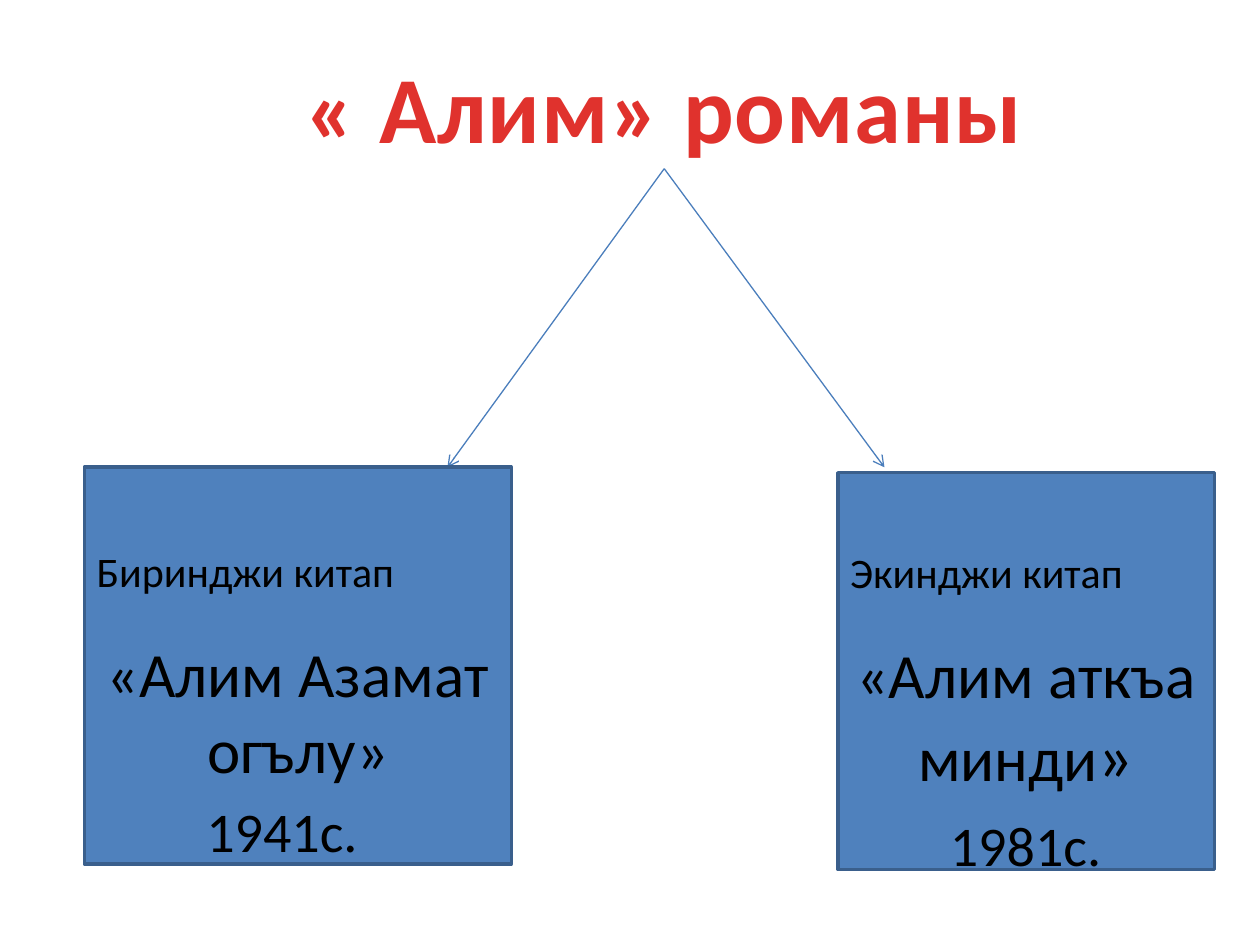
from lxml.etree import SubElement as Sub
from pptx import Presentation
from pptx.dml.color import RGBColor
from pptx.enum.shapes import MSO_CONNECTOR as Link, MSO_SHAPE as Shape
from pptx.enum.text import MSO_ANCHOR as Anchor, PP_ALIGN as Align
from pptx.oxml.ns import qn
from pptx.util import Cm, Pt


def paint(color, code):
    """Fill or font colour from a hex string."""
    color.rgb = RGBColor.from_string(code)


def style(para, size, code="000000", align=Align.LEFT):
    para.alignment = align
    para.font.name = "Calibri"
    para.font.size = Pt(size)
    paint(para.font.color, code)


prs = Presentation()
prs.slide_width, prs.slide_height = Cm(25.4), Cm(19.05)
slide = prs.slides.add_slide(prs.slide_layouts[5])
shapes = slide.shapes

# Title
title = shapes.title
title.left, title.top, title.width, title.height = Cm(5.82), Cm(0.84), Cm(15.14), Cm(2.57)
title.text_frame.word_wrap = False
para = title.text_frame.paragraphs[0]
run = para.add_run()
run.text = "« Алим» романы"
style(para, 54, "E0322D", Align.CENTER)
para.font.bold = True
run.font._element.set("spc", "50")

# Books: left, top, width, arrow tip, heading, name, closing quote size, year, its left and top
books = [
    (1.7, 9.42, 8.61, 9.02, "Биринджи китап", "«Алим Азамат огълу", 36, "1941c.", 3.91, 15.93),
    (16.89, 9.53, 7.59, 17.83, "Экинджи китап", "«Алим аткъа минди", 40, "1981c.", 18.9, 16.21),
]
for left, top, width, tip, head, name, quote, year, x, y in books:
    arrow = shapes.add_connector(Link.STRAIGHT, Cm(13.39), Cm(3.4), Cm(tip), Cm(9.42))
    paint(arrow.line.color, "4B7EBC")
    arrow.line.width = Pt(0.75)
    Sub(arrow.line._get_or_add_ln(), qn("a:tailEnd"), type="arrow")
    Sub(arrow._element.spPr, qn("a:effectLst"))

    box = shapes.add_shape(Shape.RECTANGLE, Cm(left), Cm(top), Cm(width), Cm(8))
    box.shadow.inherit = False
    box.fill.solid()
    paint(box.fill.fore_color, "4F81BD")
    paint(box.line.color, "3A5F8C")
    box.line.width = Pt(2)
    frame = box.text_frame
    frame.word_wrap = True
    frame.vertical_anchor = Anchor.MIDDLE
    para = frame.paragraphs[0]
    para.text = head
    style(para, 24)
    para = frame.add_paragraph()
    para.space_before = Pt(22)
    style(para, 36, align=Align.CENTER)
    para.add_run().text = name
    run = para.add_run()
    run.text = "»"
    run.font.size = Pt(quote)

    label = shapes.add_textbox(Cm(x), Cm(y), Cm(3.61), Cm(1.63))
    label.text_frame.word_wrap = False
    para = label.text_frame.paragraphs[0]
    para.text = year
    style(para, 32)

prs.save("out.pptx")
